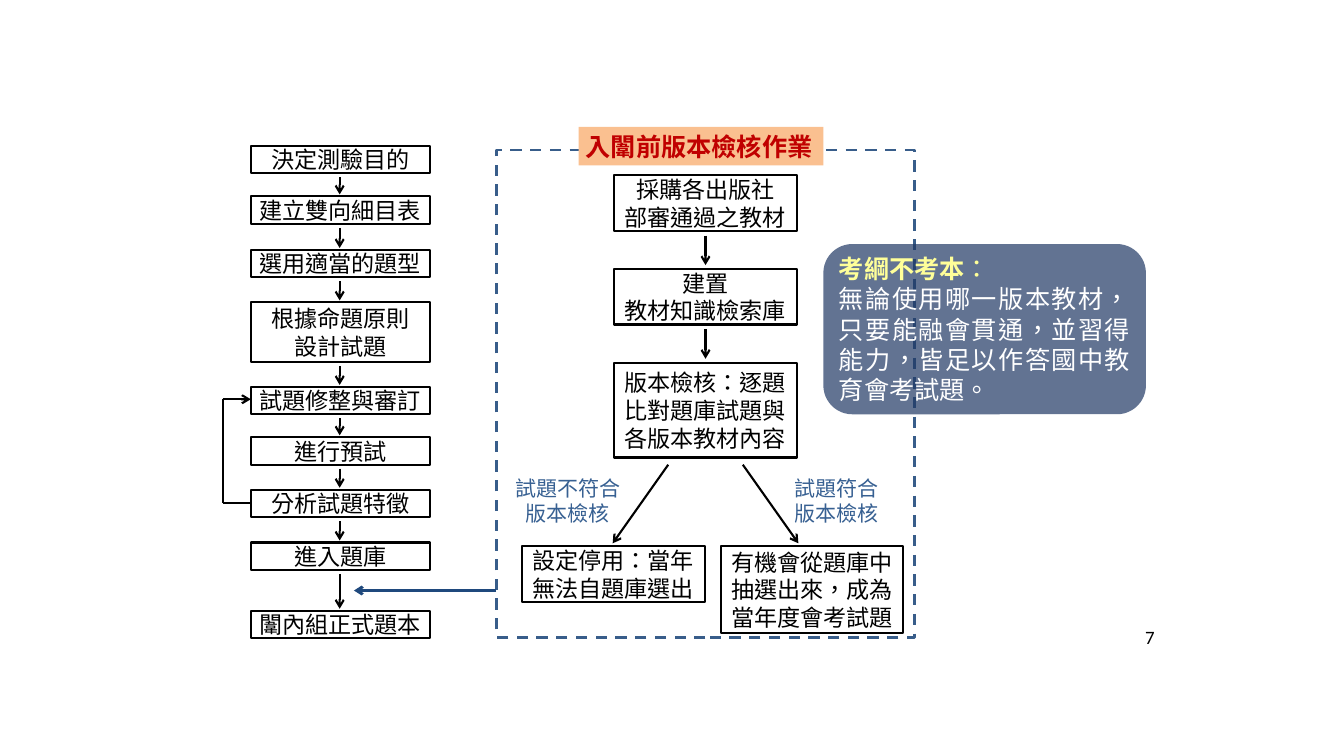
from lxml import etree
from pptx import Presentation
from pptx.dml.color import RGBColor
from pptx.enum.dml import MSO_LINE
from pptx.enum.lang import MSO_LANGUAGE_ID
from pptx.enum.shapes import MSO_CONNECTOR, MSO_SHAPE
from pptx.enum.text import MSO_ANCHOR, PP_ALIGN
from pptx.oxml.ns import qn
from pptx.util import Cm, Pt

BLACK = RGBColor(0, 0, 0)
WHITE = RGBColor(255, 255, 255)
RED = RGBColor(0xC0, 0, 0)
PEACH = RGBColor(0xFA, 0xC0, 0x90)
YELLOW = RGBColor(0xFF, 0xFF, 0x99)
NAVY = RGBColor(0x20, 0x38, 0x64)
LABEL_BLUE = RGBColor(0x37, 0x60, 0x92)
FRAME_BLUE = RGBColor(0x38, 0x5D, 0x8A)
ARROW_BLUE = RGBColor(0x1F, 0x49, 0x7D)

CENTER, LEFT, JUSTIFY = PP_ALIGN.CENTER, PP_ALIGN.LEFT, PP_ALIGN.JUSTIFY
MIDDLE = MSO_ANCHOR.MIDDLE
RECTANGLE, ROUNDED = MSO_SHAPE.RECTANGLE, MSO_SHAPE.ROUNDED_RECTANGLE
STRAIGHT = MSO_CONNECTOR.STRAIGHT
DASH = MSO_LINE.DASH
CHINESE = MSO_LANGUAGE_ID.TRADITIONAL_CHINESE
CJK_FONT = "Noto Sans CJK SC"

STEP_LEFT, STEP_WIDTH, STEP_HEIGHT = 6.32, 4.52, 0.69
STEP_AXIS = 8.56
STEPS = [
    (3.68, STEP_HEIGHT, "決定測驗目的"),
    (4.95, STEP_HEIGHT, "建立雙向細目表"),
    (6.3, STEP_HEIGHT, "選用適當的題型"),
    (7.62, 1.5, "根據命題原則\n設計試題"),
    (9.75, STEP_HEIGHT, "試題修整與審訂"),
    (11.02, STEP_HEIGHT, "進行預試"),
    (12.34, STEP_HEIGHT, "分析試題特徵"),
    (13.67, STEP_HEIGHT, "進入題庫"),
    (15.39, STEP_HEIGHT, "闈內組正式題本"),
]
CHECK_LEFT, CHECK_WIDTH, CHECK_AXIS = 15.48, 4.6, 17.78
CHECKS = [
    (4.42, 1.4, "採購各出版社\n部審通過之教材"),
    (6.78, 1.4, "建置\n教材知識檢索庫"),
    (9.14, 2.39, "版本檢核：逐題比對題庫試題與各版本教材內容"),
]
BRANCHES = [
    (-1, 12.52, "試題不符合\n版本檢核", 13.16, 1.4, "設定停用：當年無法自題庫選出"),
    (1, 19.3, "試題符合\n版本檢核", 18.16, 2.18, "有機會從題庫中抽選出來，成為當年度會考試題"),
]


def add_span(para, text, size=16.5, color=BLACK, bold=False, font=CJK_FONT):
    span = para.add_run()
    span.text = text
    span.font.size = Pt(size)
    span.font.bold = bold
    span.font.color.rgb = color
    span.font.name = font
    span.font.language_id = CHINESE
    etree.SubElement(span.font._element, qn("a:ea"), typeface=font)


def prepare_frame(shape):
    frame = shape.text_frame
    frame.word_wrap = True
    frame.vertical_anchor = MIDDLE
    frame.margin_left = frame.margin_right = Cm(0.18)
    frame.margin_top = frame.margin_bottom = Cm(0.1)
    return frame


def write_text(shape, text, align=CENTER, **style):
    frame = prepare_frame(shape)
    for index, line in enumerate(text.split("\n")):
        para = frame.add_paragraph() if index else frame.paragraphs[0]
        para.alignment = align
        add_span(para, line, **style)


def add_box(page, left, top, width, height, kind=RECTANGLE, fill=None, line=BLACK, weight=1.5):
    box = page.shapes.add_shape(kind, Cm(left), Cm(top), Cm(width), Cm(height))
    box.shadow.inherit = False
    if fill is None:
        box.fill.background()
    else:
        box.fill.solid()
        box.fill.fore_color.rgb = fill
    if line is None:
        box.line.fill.background()
    else:
        box.line.color.rgb = line
        box.line.width = Pt(weight)
    return box


def add_label(page, left, top, width, height, text, **style):
    label = page.shapes.add_textbox(Cm(left), Cm(top), Cm(width), Cm(height))
    write_text(label, text, **style)


def add_line(page, start, end, color=BLACK, weight=1.5, arrow=True):
    line = page.shapes.add_connector(STRAIGHT, *map(Cm, start + end))
    line.line.color.rgb = color
    line.line.width = Pt(weight)
    if arrow:
        etree.SubElement(line.line._get_or_add_ln(), qn("a:tailEnd"), type="arrow")
    etree.SubElement(line._element.spPr, qn("a:effectLst"))


def add_flow(page, left, width, axis, rows, gap_after, gap_before):
    for top, height, text in rows:
        write_text(add_box(page, left, top, width, height), text)
    for (top, height, _), (next_top, _, _) in zip(rows, rows[1:]):
        add_line(page, (axis, top + height + gap_after), (axis, next_top - gap_before))


def add_review_loop(page):
    loop_left, review_y, analysis_y = 5.61, 10.06, 12.68
    add_line(page, (STEP_LEFT, analysis_y), (loop_left, analysis_y), arrow=False)
    add_line(page, (loop_left, analysis_y), (loop_left, review_y), arrow=False)
    add_line(page, (loop_left, review_y), (STEP_LEFT, review_y))


def add_branches(page):
    for side, label_left, label, left, height, result in BRANCHES:
        add_line(page, (CHECK_AXIS + side * 0.94, 11.71), (CHECK_AXIS + side * 2.34, 13.69))
        write_text(add_box(page, left, 13.77, CHECK_WIDTH, height), result)
        add_label(page, label_left, 11.91, 3.58, 1.4, label, size=15, color=LABEL_BLUE)


def add_check_frame(page):
    frame = add_box(page, 12.52, 3.78, 10.52, 12.29, line=FRAME_BLUE, weight=2)
    frame.line.dash_style = DASH
    title = add_box(page, 14.58, 3.2, 6.17, 0.97, fill=PEACH, line=None)
    write_text(title, "入闈前版本檢核作業", align=LEFT, size=18, color=RED, bold=True)
    add_line(page, (12.5, 14.88), (8.92, 14.88), color=ARROW_BLUE, weight=2)


def add_callout(page):
    callout = add_box(page, 20.75, 6.15, 8.13, 4.29, kind=ROUNDED, fill=NAVY, line=None)
    callout.adjustments[0] = 0.17
    color = callout._element.spPr.find(qn("a:solidFill"))[0]
    etree.SubElement(color, qn("a:alpha"), val="70000")
    frame = prepare_frame(callout)
    heading, body = frame.paragraphs[0], frame.add_paragraph()
    heading.alignment = body.alignment = JUSTIFY
    add_span(heading, "考綱不考本", size=18, color=YELLOW, bold=True)
    add_span(heading, "：", size=18, color=YELLOW)
    add_span(body, "無論使用哪一版本教材，只要能融會貫通，並習得能力，皆足以作答國中教育會考試題。",
             size=18, color=WHITE)


def main():
    deck = Presentation()
    deck.slide_width, deck.slide_height = Cm(33.87), Cm(19.05)
    page = deck.slides.add_slide(deck.slide_layouts[6])
    add_flow(page, STEP_LEFT, STEP_WIDTH, STEP_AXIS, STEPS, 0.1, 0.05)
    add_review_loop(page)
    add_flow(page, CHECK_LEFT, CHECK_WIDTH, CHECK_AXIS, CHECKS, 0.12, 0.1)
    add_branches(page)
    add_check_frame(page)
    add_callout(page)
    add_label(page, 28.68, 15.67, 1.09, 0.76, "7", align=LEFT, size=13.5, font="Calibri")
    deck.save("out.pptx")


if __name__ == "__main__":
    main()
